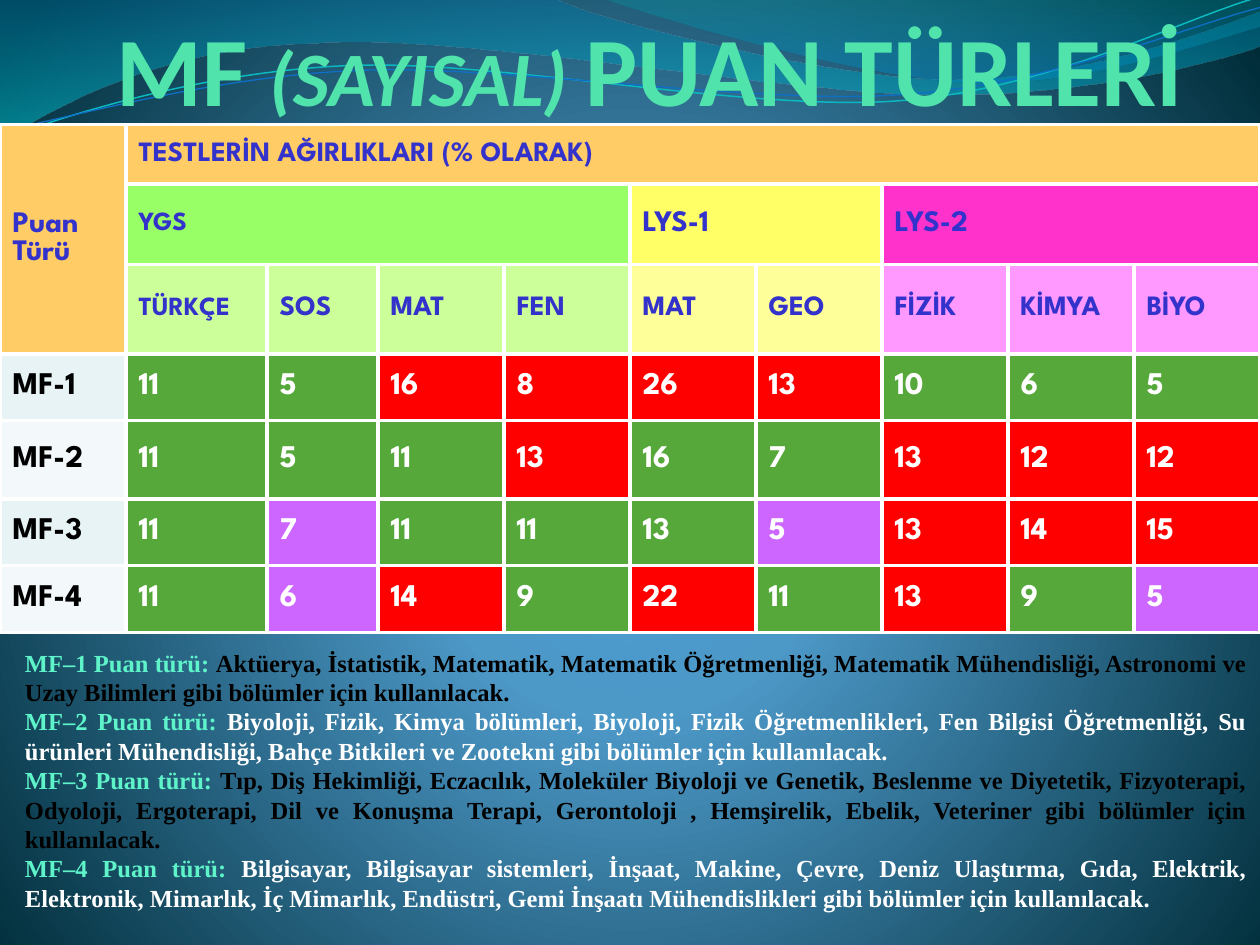
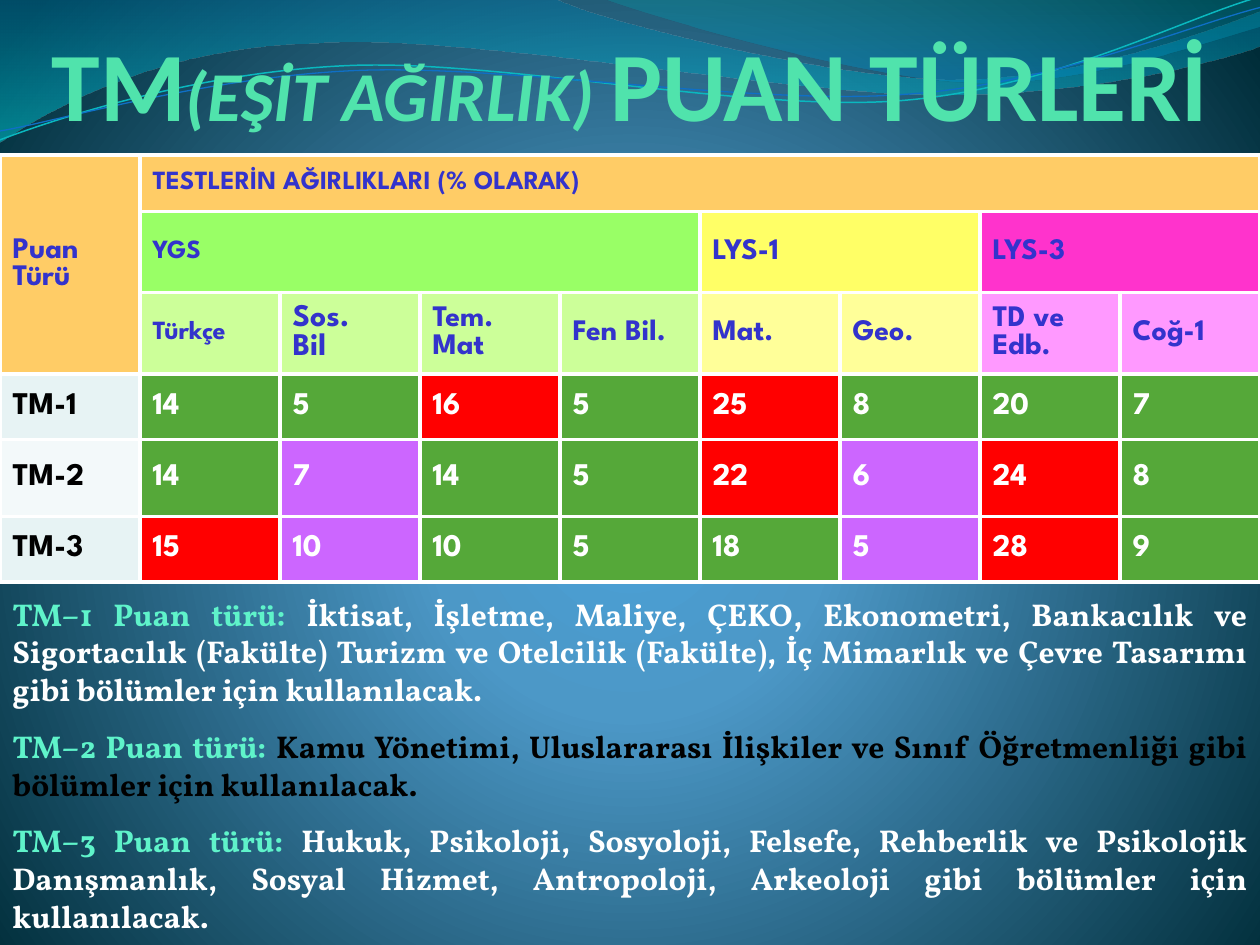
from math import cos, radians, sin

from lxml import etree
from pptx import Presentation
from pptx.dml.color import RGBColor as Color
from pptx.enum.text import MSO_ANCHOR as Anchor, MSO_AUTO_SIZE as AutoSize, PP_ALIGN as Align
from pptx.oxml import parse_xml
from pptx.oxml.ns import nsdecls, qn
from pptx.util import Inches, Pt

WIDTH, HEIGHT = Inches(10), Inches(7.5)
TITLE_GREEN = Color(0x50, 0xE3, 0xAC)
NOTE_GREEN = Color(0x5F, 0xF3, 0xCA)
HEADER_BLUE = Color(0x33, 0x33, 0xCC)
BLACK, WHITE = Color(0, 0, 0), Color(255, 255, 255)
ORANGE = Color(0xFF, 0xCC, 0x66)
GREEN, PALE_GREEN = Color(0x99, 0xFF, 0x66), Color(0xCC, 0xFF, 0x99)
YELLOW, PALE_YELLOW = Color(0xFF, 0xFF, 0x66), Color(0xFF, 0xFF, 0x99)
PINK, PALE_PINK = Color(0xFF, 0x33, 0xCC), Color(0xFF, 0x99, 0xFF)
LABEL_FILLS = Color(0xE7, 0xF3, 0xF4), Color(0xF3, 0xF9, 0xFA)
WEIGHT_FILLS = {"G": Color(0x55, 0xA8, 0x39), "R": Color(0xFF, 0, 0), "V": Color(0xCC, 0x66, 0xFF)}
WAVE_CYAN, WAVE_BLUE = Color(0x0A, 0xB8, 0xBF), Color(0x0F, 0x6F, 0xC6)
TABLE_FONT = "League Spartan"
WAVE_TILT = 2.7

DOWNWARD = '<a:lin ang="5400000" scaled="0"/>'
RADIAL = '<a:path path="circle"><a:fillToRect l="10000" t="110000" r="10000" b="100000"/></a:path>'
BACKGROUND_STOPS = [(0, "4AA0D6", 100), (25, "4C98C7", 100), (100, "002C38", 100)]

BANDS = [
    ([(0, "0074A1", 45), (100, "00C6CF", 55)], [
        [(0, 0)],
        [(4.4, -0.01)],
        [(4.76, 0.17), (6.64, 0.63), (7.58, 0.63)],
        [(8.53, 0.63), (9.58, 0.26), (10, 0.09)],
        [(10.01, 0.36)],
        [(9.83, 0.44), (8.7, 0.76), (7.46, 0.75)],
        [(6.22, 0.75), (3.82, 0.28), (2.57, 0.34)],
        [(1.29, 0.36), (0.46, 0.83), (-0.01, 1.13)],
        [(0, 0)]]),
    ([(0, "00A1A9", 30), (80, "008BBF", 45)], [
        [(4.79, -0.01)],
        [(5.09, 0.11), (6.82, 0.62), (7.69, 0.65)],
        [(8.56, 0.69), (9.61, 0.32), (10, 0.21)],
        [(10, 0)],
        [(4.79, -0.01)]]),
]
WAVE_LINES = [
    (WAVE_CYAN, 0.85, (4.99, 0.575), [
        [(0, 1.11)],
        [(0.48, 0.93), (1.58, 0.57), (2.77, 0.52)],
        [(3.95, 0.47), (5.93, 0.89), (7.13, 0.8)],
        [(8.33, 0.71), (9.38, 0.15), (9.98, -0.02)]]),
    (WAVE_BLUE, 0.75, (5, 0.59), [
        [(0, 1.04)],
        [(0.47, 0.96), (1.64, 0.61), (2.83, 0.56)],
        [(4.03, 0.51), (5.97, 0.84), (7.17, 0.75)],
        [(8.36, 0.67), (9.41, 0.21), (10, 0.06)]]),
]

MF_GROUPS = [
    ("YGS", 15, GREEN, PALE_GREEN, [("TÜRKÇE", 15), ("SOS", 16), ("MAT", 16), ("FEN", 16)]),
    ("LYS-1", 17, YELLOW, PALE_YELLOW, [("MAT", 16), ("GEO", 16)]),
    ("LYS-2", 17, PINK, PALE_PINK, [("FİZİK", 16), ("KİMYA", 16), ("BİYO", 16)]),
]
MF_SCORES = [
    ("MF-1", (11, 5, 16, 8, 26, 13, 10, 6, 5), "GGRRRRGGG"),
    ("MF-2", (11, 5, 11, 13, 16, 7, 13, 12, 12), "GGGRGGRRR"),
    ("MF-3", (11, 7, 11, 11, 13, 5, 13, 14, 15), "GVGGGVRRR"),
    ("MF-4", (11, 6, 14, 9, 22, 11, 13, 9, 5), "GVRGRGRGV"),
]
MF_NOTES = [
    ("MF–1 Puan türü: ", "Aktüerya, İstatistik, Matematik, Matematik Öğretmenliği, Matematik Mühendisliği, "
     "Astronomi ve Uzay Bilimleri gibi bölümler için kullanılacak.", BLACK),
    ("MF–2 Puan türü: ", "Biyoloji, Fizik, Kimya bölümleri, Biyoloji, Fizik Öğretmenlikleri, Fen Bilgisi "
     "Öğretmenliği, Su ürünleri Mühendisliği, Bahçe Bitkileri ve Zootekni gibi bölümler için kullanılacak.", WHITE),
    ("MF–3 Puan türü: ", "Tıp, Diş Hekimliği, Eczacılık, Moleküler Biyoloji ve Genetik, Beslenme ve Diyetetik, "
     "Fizyoterapi, Odyoloji, Ergoterapi, Dil ve Konuşma Terapi, Gerontoloji , Hemşirelik, Ebelik, Veteriner "
     "gibi bölümler için kullanılacak.", BLACK),
    ("MF–4 Puan türü: ", "Bilgisayar, Bilgisayar sistemleri, İnşaat, Makine, Çevre, Deniz Ulaştırma, Gıda, "
     "Elektrik, Elektronik, Mimarlık, İç Mimarlık, Endüstri, Gemi İnşaatı Mühendislikleri gibi bölümler için "
     "kullanılacak.", WHITE),
]
TM_GROUPS = [
    ("YGS", 15, GREEN, PALE_GREEN, [("Türkçe", 15), ("Sos.\nBil", 18), ("Tem.\nMat", 17), ("Fen Bil.", 17)]),
    ("LYS-1", 17, YELLOW, PALE_YELLOW, [("Mat.", 17), ("Geo.", 17)]),
    ("LYS-3", 17, PINK, PALE_PINK, [("TD ve Edb.", 17), ("Coğ-1", 17)]),
]
TM_SCORES = [
    ("TM-1", (14, 5, 16, 5, 25, 8, 20, 7), "GGRGRGGG"),
    ("TM-2", (14, 7, 14, 5, 22, 6, 24, 8), "GVGGRVRG"),
    ("TM-3", (15, 10, 10, 5, 18, 5, 28, 9), "RVGGGVRG"),
]
TM_NOTES = [
    ("TM–1 Puan türü: ", "İktisat, İşletme, Maliye, ÇEKO, Ekonometri, Bankacılık ve Sigortacılık (Fakülte) "
     "Turizm ve Otelcilik (Fakülte), İç Mimarlık ve Çevre Tasarımı gibi bölümler için kullanılacak.", WHITE),
    ("TM–2 Puan türü: ", "Kamu Yönetimi, Uluslararası İlişkiler ve Sınıf Öğretmenliği gibi bölümler için "
     "kullanılacak.", BLACK),
    ("TM–3 Puan türü: ", "Hukuk, Psikoloji, Sosyoloji, Felsefe, Rehberlik ve Psikolojik Danışmanlık, Sosyal "
     "Hizmet, Antropoloji, Arkeoloji gibi bölümler için kullanılacak.", WHITE),
]


def set_gradient(properties, stops, direction):
    """Replace the solid fill of a properties element by a gradient."""
    gradient = parse_xml(f'<a:gradFill {nsdecls("a")} rotWithShape="1"><a:gsLst/>{direction}</a:gradFill>')
    for position, color, opacity in stops:
        stop = etree.SubElement(gradient[0], qn("a:gs"), pos=str(position * 1000))
        rgb = etree.SubElement(stop, qn("a:srgbClr"), val=color)
        if opacity < 100:
            etree.SubElement(rgb, qn("a:alpha"), val=str(opacity * 1000))
    properties.replace(properties.find(qn("a:solidFill")), gradient)


def turn(point, center, degrees):
    """Return a point turned clockwise around a center."""
    angle = radians(degrees)
    across, down = point[0] - center[0], point[1] - center[1]
    return (center[0] + across * cos(angle) - down * sin(angle),
            center[1] + across * sin(angle) + down * cos(angle))


def add_wave(slide, segments, close):
    """Draw an outline of straight (one point) and cubic (three points) segments."""
    points = [(Inches(x), Inches(y)) for segment in segments for x, y in segment]
    builder = slide.shapes.build_freeform(*points[0])
    builder.add_line_segments(points[1:], close=close)
    shape = builder.convert_to_shape()
    shape.shadow.inherit = False
    steps = iter(shape.element.findall(".//" + qn("a:lnTo")))
    for segment in segments[1:]:
        first, *others = [next(steps) for _ in segment]
        if others:
            curve = etree.Element(qn("a:cubicBezTo"))
            first.addprevious(curve)
            for step in (first, *others):
                curve.append(step[0])
                step.getparent().remove(step)
    return shape


def decorate_master(presentation, slide):
    """Give the master its radial background and its waves."""
    master = presentation.slide_master
    master.background.fill.solid()
    set_gradient(master.element.find(".//" + qn("p:bgPr")), BACKGROUND_STOPS, RADIAL)
    waves = []
    for stops, segments in BANDS:
        band = add_wave(slide, segments, True)
        band.fill.solid()
        band.line.fill.background()
        set_gradient(band.element.spPr, stops, DOWNWARD)
        waves.append(band)
    for color, line_width, center, segments in WAVE_LINES:
        level = [[turn(point, center, WAVE_TILT) for point in segment] for segment in segments]
        wave = add_wave(slide, level, False)
        wave.rotation = -WAVE_TILT
        wave.fill.background()
        wave.line.color.rgb = color
        wave.line.width = Pt(line_width)
        waves.append(wave)
    for order, wave in enumerate(waves):
        wave.element.nvSpPr.cNvPr.set("id", str(20 + order))
        master.element.cSld.spTree.insert(2 + order, wave.element)


def set_title(slide, box, parts):
    """Fill the title placeholder with a plain, an italic and a plain part."""
    title = slide.shapes.title
    title.left, title.top, title.width, title.height = map(Inches, box)
    frame = title.text_frame
    frame.auto_size, frame.vertical_anchor, frame.word_wrap = AutoSize.NONE, Anchor.MIDDLE, True
    frame.margin_left = frame.margin_right = frame.margin_top = frame.margin_bottom = 0
    paragraph = frame.paragraphs[0]
    paragraph.alignment = Align.CENTER
    font = paragraph.font
    font.name, font.bold, font.color.rgb = "Calibri", True, TITLE_GREEN
    for text, size, italic in parts:
        run = paragraph.add_run()
        run.text, run.font.size, run.font.italic = text, Pt(size), italic


def set_cell(cell, text, size, color, fill):
    """Write and colour one table cell."""
    cell.text_frame.text = str(text)
    cell.vertical_anchor = Anchor.MIDDLE
    cell.fill.solid()
    cell.fill.fore_color.rgb = fill
    for paragraph in cell.text_frame.paragraphs:
        font = paragraph.font
        font.name, font.size, font.bold, font.color.rgb = TABLE_FONT, Pt(size), True, color


def set_borders(cell):
    """Draw white borders on the four sides of a cell."""
    properties = cell._tc.get_or_add_tcPr()
    for order, side in enumerate(("lnL", "lnR", "lnT", "lnB")):
        properties.insert(order, parse_xml(
            f'<a:{side} {nsdecls("a")} w="{Pt(2.25)}"><a:solidFill><a:srgbClr val="{WHITE}"/>'
            f'</a:solidFill></a:{side}>'))


def add_score_table(slide, top, column_shares, row_heights, heading_size, groups, scores):
    """Add the table of test weights with its three header rows."""
    columns, rows = len(column_shares), len(row_heights)
    table = slide.shapes.add_table(rows, columns, 0, Inches(top), WIDTH, Inches(sum(row_heights))).table
    for column, share in zip(table.columns, column_shares):
        column.width = int(WIDTH * share / sum(column_shares))
    for row, height in zip(table.rows, row_heights):
        row.height = Inches(height)

    table.cell(0, 0).merge(table.cell(2, 0))
    set_cell(table.cell(0, 0), "Puan Türü", 17, HEADER_BLUE, ORANGE)
    table.cell(0, 1).merge(table.cell(0, columns - 1))
    set_cell(table.cell(0, 1), "TESTLERİN AĞIRLIKLARI (% OLARAK)", heading_size, HEADER_BLUE, ORANGE)
    first = 1
    for name, size, fill, subject_fill, subjects in groups:
        table.cell(1, first).merge(table.cell(1, first + len(subjects) - 1))
        set_cell(table.cell(1, first), name, size, HEADER_BLUE, fill)
        for column, (subject, subject_size) in enumerate(subjects, first):
            set_cell(table.cell(2, column), subject, subject_size, HEADER_BLUE, subject_fill)
        first += len(subjects)

    for row, (label, weights, levels) in enumerate(scores, 3):
        set_cell(table.cell(row, 0), label, 18, BLACK, LABEL_FILLS[(row - 3) % 2])
        for column, (weight, level) in enumerate(zip(weights, levels), 1):
            set_cell(table.cell(row, column), weight, 18, WHITE, WEIGHT_FILLS[level])
    for cell in table.iter_cells():
        set_borders(cell)


def add_notes_text(slide, box, notes, font_name, size, gap):
    """Add justified paragraphs, each with a green lead."""
    frame = slide.shapes.add_textbox(*map(Inches, box)).text_frame
    frame.word_wrap = True
    for order, (lead, text, color) in enumerate(notes):
        paragraph = frame.add_paragraph() if order else frame.paragraphs[0]
        paragraph.alignment = Align.JUSTIFY
        paragraph.space_before = Pt(gap if order else 0)
        font = paragraph.font
        font.name, font.size, font.bold = font_name, Pt(size), True
        for words, run_color in ((lead, NOTE_GREEN), (text, color)):
            run = paragraph.add_run()
            run.text, run.font.color.rgb = words, run_color


def main():
    """Build the two slides of score types."""
    presentation = Presentation()
    presentation.slide_width, presentation.slide_height = WIDTH, HEIGHT
    title_only = presentation.slide_layouts[5]
    mf_slide, tm_slide = (presentation.slides.add_slide(title_only) for _ in range(2))
    decorate_master(presentation, mf_slide)

    set_title(mf_slide, (0.91, 0, 8.5, 1.07),
              [("MF ", 56, False), ("(SAYISAL) ", 44, True), ("PUAN TÜRLERİ", 56, False)])
    add_score_table(mf_slide, 0.99, [1, 1.12, 0.88] + [1] * 7,
                    [0.47, 0.64, 0.71, 0.53, 0.62, 0.53, 0.53], 16, MF_GROUPS, MF_SCORES)
    add_notes_text(mf_slide, (0.1, 5.09, 9.9, 2.22), MF_NOTES, "Times New Roman", 14, 0)

    set_title(tm_slide, (0, 0, 10, 1.31),
              [("TM", 56, False), ("(EŞİT AĞIRLIK) ", 40, True), ("PUAN TÜRLERİ", 56, False)])
    add_score_table(tm_slide, 1.23, [1] * 9, [0.45, 0.64, 0.65, 0.52, 0.61, 0.52], 15, TM_GROUPS, TM_SCORES)
    add_notes_text(tm_slide, (0, 4.67, 10, 2.83), TM_NOTES, "Vollkorn", 18, 10.8)

    presentation.save("out.pptx")


if __name__ == "__main__":
    main()
